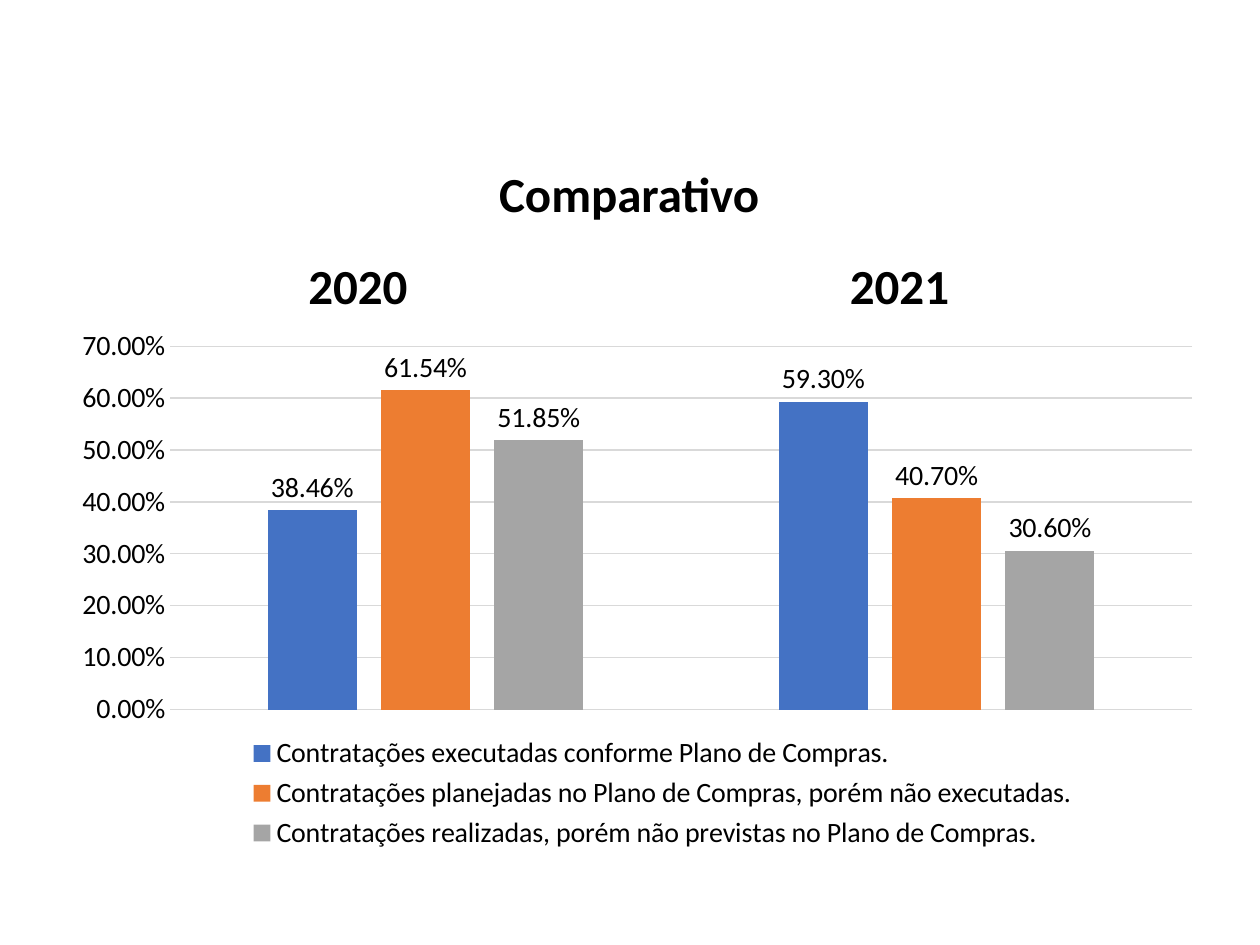
"""Build the slide comparing procurement results of 2020 and 2021."""
from pptx import Presentation
from pptx.chart.data import CategoryChartData
from pptx.dml.color import RGBColor
from pptx.enum.chart import XL_CHART_TYPE, XL_LABEL_POSITION, XL_LEGEND_POSITION, XL_TICK_MARK
from pptx.enum.text import MSO_ANCHOR, MSO_AUTO_SIZE, PP_ALIGN
from pptx.oxml import parse_xml
from pptx.oxml.ns import nsdecls, qn
from pptx.util import Pt

BLACK = RGBColor(0, 0, 0)
GRID_GRAY = RGBColor(0xD9, 0xD9, 0xD9)
BLUE = RGBColor(0x44, 0x72, 0xC4)
ORANGE = RGBColor(0xED, 0x7D, 0x31)
GRAY = RGBColor(0xA5, 0xA5, 0xA5)

FONT = "Calibri"
PERCENT = "0.00%"
COMPARISON_LAYOUT = 4
HEADINGS = {
    0: ("Comparativo", 359.5, 93.5, 666),
    1: ("2020", 204.5, 146, 200),
    3: ("2021", 514, 146, 200),
}
HEADING_HEIGHT = 40
CATEGORIES = ["1", "2"]
SERIES = [
    ("Contratações executadas conforme Plano de Compras.", (0.3846, 0.593), BLUE),
    ("Contratações planejadas no Plano de Compras, porém não executadas.", (0.6154, 0.407), ORANGE),
    ("Contratações realizadas, porém não previstas no Plano de Compras.", (0.5185, 0.306), GRAY),
]
PLOT_LAYOUT = {"x": 0.104, "y": 0.096, "w": 0.879, "h": 0.635}
LEGEND_LAYOUT = {"x": 0.168, "y": 0.768}


def format_font(font, size, bold=False):
    font.name = FONT
    font.size = Pt(size)
    font.bold = bold
    font.color.rgb = BLACK


def add_headings(slide):
    for shape in list(slide.placeholders):
        index = shape.placeholder_format.idx
        if index not in HEADINGS:
            shape.element.getparent().remove(shape.element)
            continue
        text, center, top, width = HEADINGS[index]
        shape.left, shape.top = Pt(center - width / 2), Pt(top)
        shape.width, shape.height = Pt(width), Pt(HEADING_HEIGHT)
        text_frame = shape.text_frame
        text_frame.text = text
        text_frame.word_wrap = True
        text_frame.auto_size = MSO_AUTO_SIZE.NONE
        text_frame.vertical_anchor = MSO_ANCHOR.TOP
        paragraph = text_frame.paragraphs[0]
        paragraph.alignment = PP_ALIGN.CENTER
        paragraph.line_spacing = 0.9
        paragraph.space_before = Pt(0)
        format_font(paragraph.runs[0].font, 28, bold=True)


def build_layout(fractions, target=""):
    modes = '<c:xMode val="edge"/><c:yMode val="edge"/>'
    sizes = "".join(f'<c:{key} val="{value}"/>' for key, value in fractions.items())
    return parse_xml(
        f'<c:layout {nsdecls("c")}><c:manualLayout>{target}{modes}{sizes}</c:manualLayout></c:layout>')


def set_layouts(chart):
    plot_area = chart._chartSpace.chart.plotArea
    legend = chart.legend._element
    for parent in (plot_area, legend):
        for layout in parent.findall(qn("c:layout")):
            parent.remove(layout)
    plot_area.insert(0, build_layout(PLOT_LAYOUT, '<c:layoutTarget val="inner"/>'))
    legend.find(qn("c:legendPos")).addnext(build_layout(LEGEND_LAYOUT))


def add_comparison_chart(slide):
    chart_data = CategoryChartData(number_format=PERCENT)
    chart_data.categories = CATEGORIES
    for name, values, color in SERIES:
        chart_data.add_series(name, values)
    chart = slide.shapes.add_chart(
        XL_CHART_TYPE.COLUMN_CLUSTERED, Pt(28), Pt(166.5), Pt(664.5), Pt(327), chart_data).chart
    format_font(chart.font, 16)
    chart.has_title = False

    chart.has_legend = True
    chart.legend.position = XL_LEGEND_POSITION.BOTTOM
    chart.legend.include_in_layout = False
    format_font(chart.legend.font, 16)
    set_layouts(chart)

    chart.category_axis.visible = False
    axis = chart.value_axis
    axis.minimum_scale, axis.maximum_scale, axis.major_unit = 0, 0.7, 0.1
    axis.major_tick_mark = axis.minor_tick_mark = XL_TICK_MARK.NONE
    axis.format.line.fill.background()
    axis.major_gridlines.format.line.color.rgb = GRID_GRAY
    axis.major_gridlines.format.line.width = Pt(0.75)
    axis.tick_labels.number_format = PERCENT
    axis.tick_labels.number_format_is_linked = False
    format_font(axis.tick_labels.font, 16)

    plot = chart.plots[0]
    plot.gap_width, plot.overlap = 219, -27
    plot.vary_by_categories = False
    plot.has_data_labels = True
    labels = plot.data_labels
    labels.show_value = True
    labels.position = XL_LABEL_POSITION.OUTSIDE_END
    labels.number_format = PERCENT
    labels.number_format_is_linked = False
    format_font(labels.font, 16)
    for series, (name, values, color) in zip(plot.series, SERIES):
        series.format.fill.solid()
        series.format.fill.fore_color.rgb = color


def main():
    presentation = Presentation()
    presentation.slide_width, presentation.slide_height = Pt(720), Pt(540)
    slide = presentation.slides.add_slide(presentation.slide_layouts[COMPARISON_LAYOUT])
    add_headings(slide)
    add_comparison_chart(slide)
    presentation.save("out.pptx")


if __name__ == "__main__":
    main()
